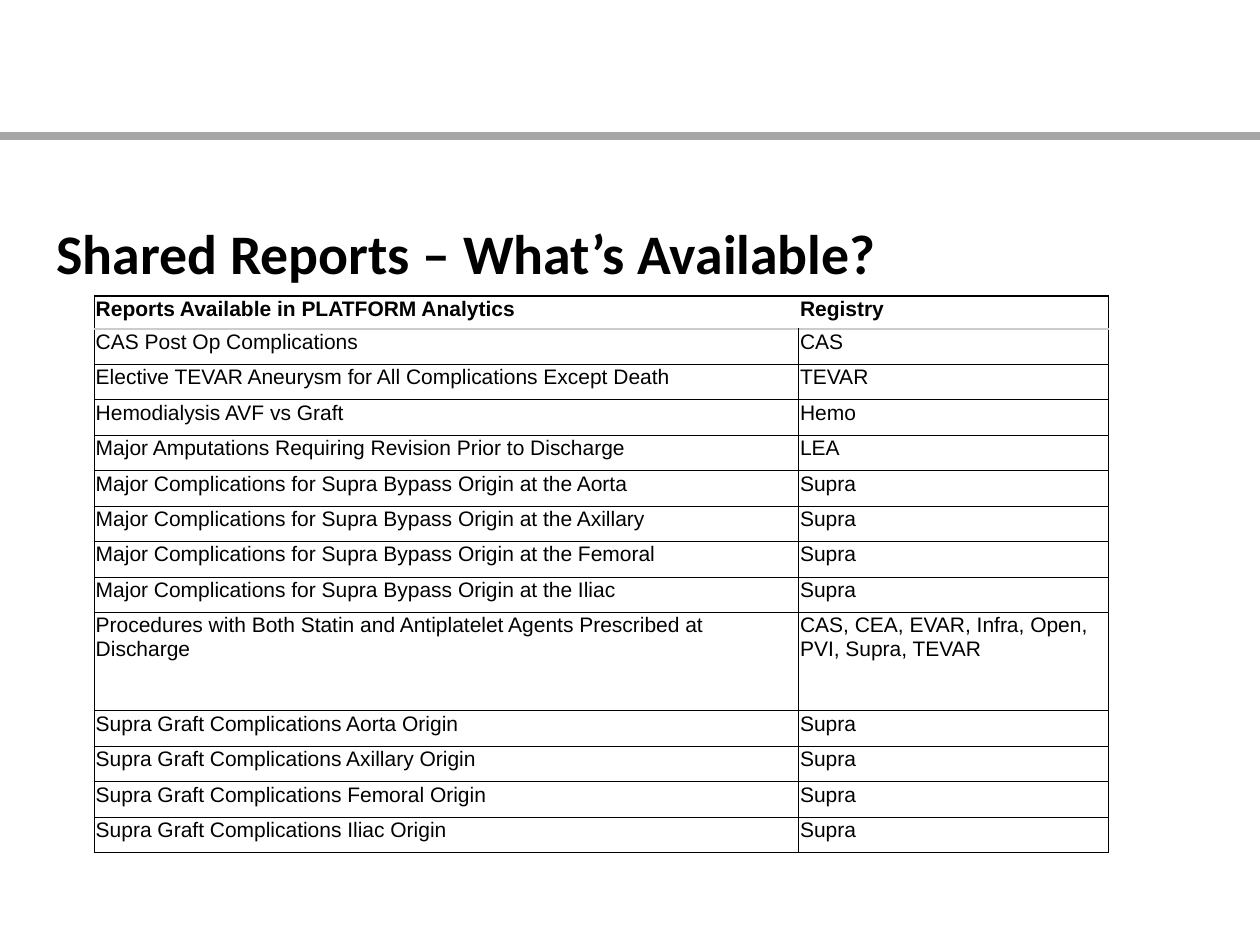
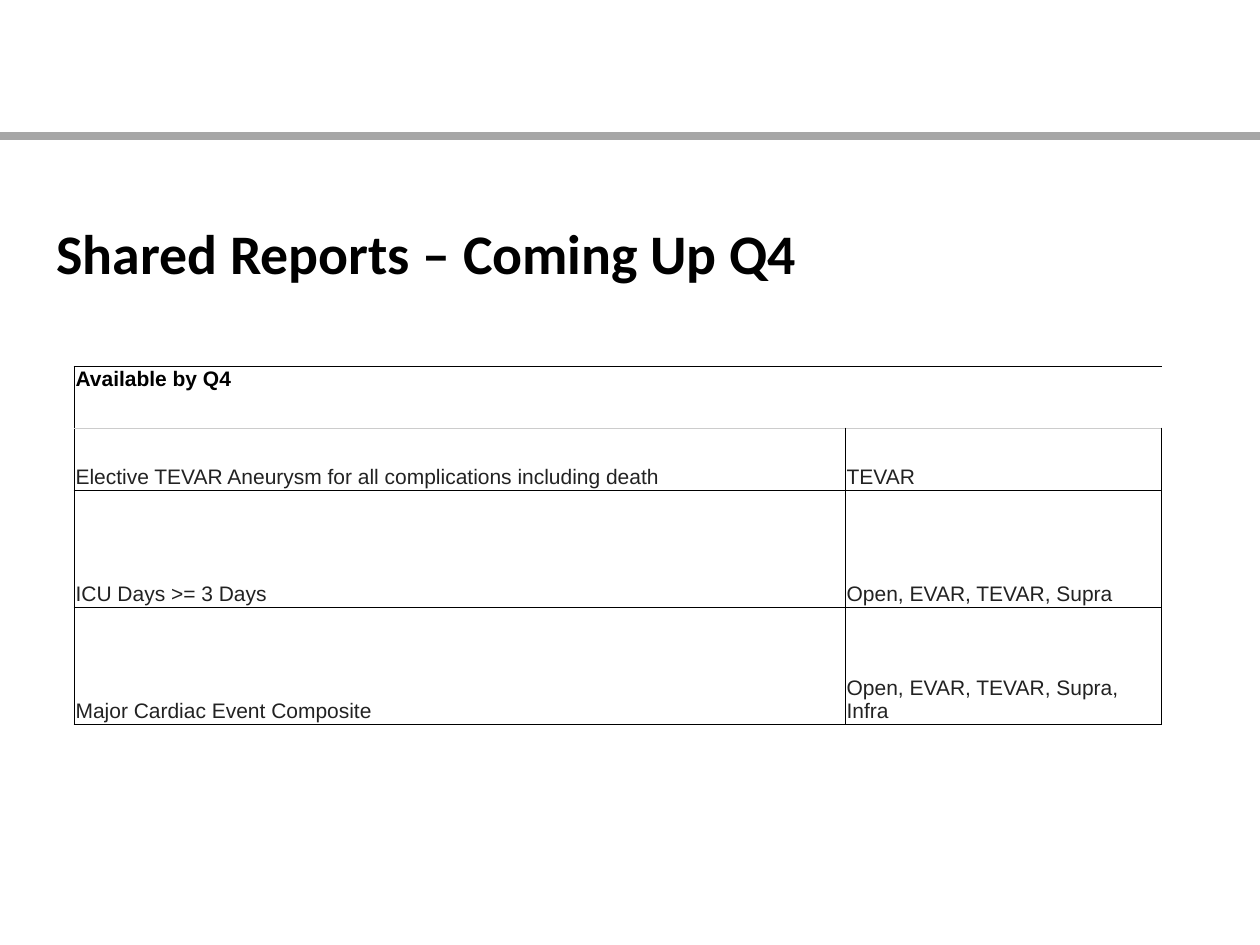
from dataclasses import dataclass

from lxml import etree
from pptx import Presentation
from pptx.dml.color import RGBColor
from pptx.enum.shapes import MSO_CONNECTOR
from pptx.enum.text import MSO_ANCHOR
from pptx.oxml.ns import qn
from pptx.util import Inches, Pt

STRAIGHT = MSO_CONNECTOR.STRAIGHT
TOP, MIDDLE, BOTTOM = MSO_ANCHOR.TOP, MSO_ANCHOR.MIDDLE, MSO_ANCHOR.BOTTOM


@dataclass(frozen=True)
class Theme:
    paper: str = "FFFFFF"
    ink: str = "000000"
    soft_ink: str = "222222"
    band: str = "A6A6A6"
    header_rule: str = "CCCCCC"
    title_font: str = "Calibri"
    table_font: str = "Arial"
    title_size: float = 31.9
    table_size: float = 12
    band_width: float = 5
    outer_width: float = 1
    inner_width: float = 0.5
    cell_inset: float = 0.01


THEME = Theme()
TITLE_BOX = (0.35, 1.67, 6.97, 0.67)
BAND_TOP = 1.08

AVAILABLE_REPORTS = [
    ("Reports Available in PLATFORM Analytics", "Registry"),
    ("CAS Post Op Complications", "CAS"),
    ("Elective TEVAR Aneurysm for All Complications Except Death", "TEVAR"),
    ("Hemodialysis AVF vs Graft", "Hemo"),
    ("Major Amputations Requiring Revision Prior to Discharge", "LEA"),
    *[(f"Major Complications for Supra Bypass Origin at the {origin}", "Supra")
      for origin in ("Aorta", "Axillary", "Femoral", "Iliac")],
    ("Procedures with Both Statin and Antiplatelet Agents Prescribed at Discharge",
     "CAS, CEA, EVAR, Infra, Open, PVI, Supra, TEVAR"),
    *[(f"Supra Graft Complications {origin} Origin", "Supra")
      for origin in ("Aorta", "Axillary", "Femoral", "Iliac")],
]

COMING_REPORTS = [
    ("Available by Q4", None),
    ("Elective TEVAR Aneurysm for all complications including death", "TEVAR"),
    ("ICU Days >= 3 Days", "Open, EVAR, TEVAR, Supra"),
    ("Major Cardiac Event Composite", "Open, EVAR, TEVAR, Supra, Infra"),
]


def write_text(frame, text, *, font, size, color, bold=False):
    frame.word_wrap = True
    span = frame.paragraphs[0].add_run()
    span.text = text
    span.font.name = font
    span.font.size = Pt(size)
    span.font.bold = bold
    span.font.color.rgb = RGBColor.from_string(color)


def add_band(page, page_width):
    top = Inches(BAND_TOP)
    band = page.shapes.add_connector(STRAIGHT, 0, top, page_width, top)
    band.line.color.rgb = RGBColor.from_string(THEME.band)
    band.line.width = Pt(THEME.band_width)
    etree.SubElement(band._element.spPr, qn("a:effectLst"))


def add_title(page, text):
    box = page.shapes.add_textbox(*map(Inches, TITLE_BOX))
    box.text_frame.vertical_anchor = MIDDLE
    write_text(box.text_frame, text, font=THEME.title_font,
               size=THEME.title_size, color=THEME.ink, bold=True)


def add_page(deck, title):
    page = deck.slides.add_slide(deck.slide_layouts[6])
    add_band(page, deck.slide_width)
    add_title(page, title)
    return page


def set_border(cell, side, rule):
    """Draw one side (L, R, T or B) as a (colour, points) rule, or clear it."""
    line = etree.SubElement(cell._tc.get_or_add_tcPr(), qn(f"a:ln{side}"))
    if rule is None:
        etree.SubElement(line, qn("a:noFill"))
        return
    color, width = rule
    line.set("w", str(Pt(width)))
    fill = etree.SubElement(line, qn("a:solidFill"))
    etree.SubElement(fill, qn("a:srgbClr"), val=color)


def cell_borders(row, column, last_row, last_column):
    outer = (THEME.ink, THEME.outer_width)
    inner = (THEME.ink, THEME.inner_width)
    header = (THEME.header_rule, THEME.outer_width)
    upright = None if row == 0 else inner
    return {
        "L": outer if column == 0 else upright,
        "R": outer if column == last_column else upright,
        "T": {0: outer, 1: header}.get(row, inner),
        "B": {0: header, last_row: outer}.get(row, inner),
    }


def style_cell(cell, borders, anchor):
    cell.margin_left = cell.margin_right = Inches(THEME.cell_inset)
    cell.margin_top = cell.margin_bottom = Inches(THEME.cell_inset)
    cell.vertical_anchor = anchor
    for side, rule in borders.items():
        set_border(cell, side, rule)
    cell.fill.solid()
    cell.fill.fore_color.rgb = RGBColor.from_string(THEME.paper)


def add_report_table(page, records, box, first_width, row_heights, *,
                     body_color=THEME.ink, body_anchor=TOP):
    """Fill the box with a header row and reports; None joins a cell to its left."""
    left, top, width, height = box
    table = page.shapes.add_table(len(records), 2, *map(Inches, box)).table
    table.first_row = table.horz_banding = False
    for column, column_width in zip(table.columns, (first_width, width - first_width)):
        column.width = Inches(column_width)
    for row, row_height in zip(table.rows, row_heights):
        row.height = Inches(row_height)

    for row, record in enumerate(records):
        is_header = row == 0
        for column, text in enumerate(record):
            cell = table.cell(row, column)
            style_cell(cell, cell_borders(row, column, len(records) - 1, 1),
                       TOP if is_header else body_anchor)
            if text is None:
                table.cell(row, column - 1).merge(cell)
                continue
            write_text(cell.text_frame, text, font=THEME.table_font,
                       size=THEME.table_size, bold=is_header,
                       color=THEME.ink if is_header else body_color)


def add_available_page(deck):
    page = add_page(deck, "Shared Reports – What’s Available?")
    box = (0.75, 2.35, 8.05, 4.42)
    header_height, tall_height, tall_row = 0.26, 0.78, 9
    plain_height = (box[3] - header_height - tall_height) / (len(AVAILABLE_REPORTS) - 2)
    heights = [plain_height] * len(AVAILABLE_REPORTS)
    heights[0], heights[tall_row] = header_height, tall_height
    add_report_table(page, AVAILABLE_REPORTS, box, 5.59, heights)


def add_coming_page(deck):
    page = add_page(deck, "Shared Reports – Coming Up Q4")
    add_report_table(page, COMING_REPORTS, (0.59, 2.91, 8.63, 2.84), 6.12,
                     [0.49, 0.49, 0.93, 0.93],
                     body_color=THEME.soft_ink, body_anchor=BOTTOM)


def main():
    deck = Presentation()
    deck.slide_width, deck.slide_height = Inches(10), Inches(7.5)
    add_available_page(deck)
    add_coming_page(deck)
    deck.save("out.pptx")


if __name__ == "__main__":
    main()
